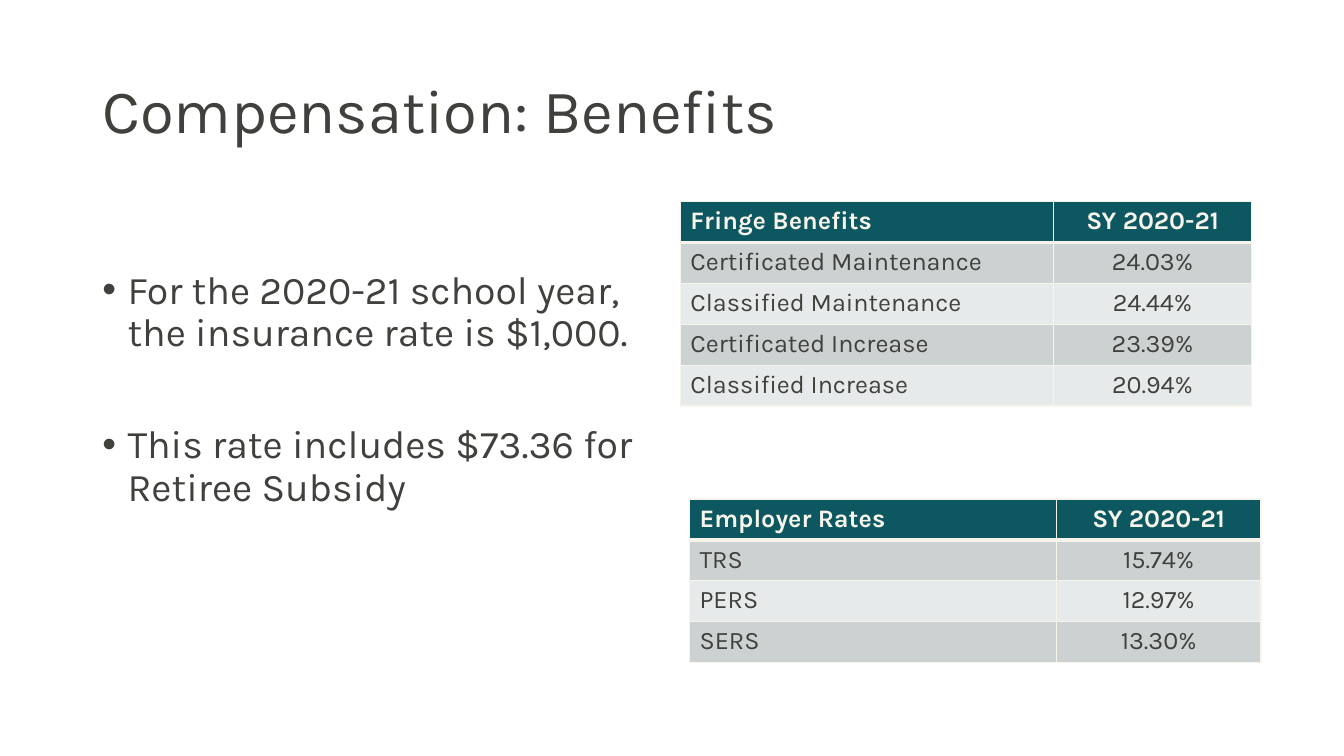
import pptx
import pptx.util
import pptx.dml.color
import pptx.enum.text
import pptx.oxml
import pptx.oxml.ns

Pt = pptx.util.Pt
ALIGN = pptx.enum.text.PP_ALIGN
ANCHOR = pptx.enum.text.MSO_ANCHOR
COLORS = {
    "text": "40403D",
    "cream": "F7F5EB",
    "teal": "0D5761",
    "dark_band": "CCD1D2",
    "light_band": "E7EAEA",
}
FONT = "Karla"
ROW_HEIGHT = 29.2


def rgb(name):
    return pptx.dml.color.RGBColor.from_string(COLORS[name])


def write(p, text, size=18, color="text", bold=False, align=ALIGN.LEFT):
    p.alignment = align
    r = p.add_run()
    r.text = text
    r.font.name = FONT
    r.font.size = Pt(size)
    r.font.bold = bold
    r.font.color.rgb = rgb(color)


def add_box(s, left, top, width, height, anchor):
    tf = s.shapes.add_textbox(Pt(left), Pt(top), Pt(width), Pt(height)).text_frame
    tf.word_wrap = True
    tf.vertical_anchor = anchor
    return tf


def add_title(s, left, top, width, height, text):
    p = add_box(s, left, top, width, height, ANCHOR.MIDDLE).paragraphs[0]
    p.line_spacing = 0.9
    write(p, text, size=44)


def add_bullets(s, left, top, width, height, items):
    tf = add_box(s, left, top, width, height, ANCHOR.TOP)
    for i, text in enumerate(items):
        p = tf.paragraphs[0] if i == 0 else tf.add_paragraph()
        p.line_spacing = 0.9
        if i:
            p.space_before = Pt(50)
        pPr = p._p.get_or_add_pPr()
        pPr.set("marL", str(Pt(18)))
        pPr.set("indent", str(-Pt(18)))
        ns = pptx.oxml.ns.nsdecls("a")
        pPr.append(pptx.oxml.parse_xml(f'<a:buFont {ns} typeface="Arial"/>'))
        pPr.append(pptx.oxml.parse_xml(f'<a:buChar {ns} char="•"/>'))
        write(p, text, size=28)


def set_borders(cell, bottom, top):
    tcPr = cell._tc.get_or_add_tcPr()
    widths = {"lnL": 1, "lnR": 1, "lnT": top, "lnB": bottom}
    for i, (tag, width) in enumerate(widths.items()):
        tcPr.insert(i, pptx.oxml.parse_xml(
            f'<a:{tag} {pptx.oxml.ns.nsdecls("a")} w="{Pt(width)}"><a:solidFill>'
            f'<a:srgbClr val="{COLORS["cream"]}"/></a:solidFill></a:{tag}>'))


def add_rates(s, left, top, widths, rows):
    table = s.shapes.add_table(len(rows), len(widths), Pt(left), Pt(top),
                               Pt(sum(widths)), Pt(ROW_HEIGHT * len(rows))).table
    for column, width in zip(table.columns, widths):
        column.width = Pt(width)
    for i, row in enumerate(rows):
        table.rows[i].height = Pt(ROW_HEIGHT)
        header = i == 0
        band = "teal" if header else "dark_band" if i % 2 else "light_band"
        for j, text in enumerate(row):
            cell = table.cell(i, j)
            cell.fill.solid()
            cell.fill.fore_color.rgb = rgb(band)
            set_borders(cell, bottom=3 if header else 1, top=3 if i == 1 else 1)
            write(cell.text_frame.paragraphs[0], text, bold=header,
                  color="cream" if header else "text",
                  align=ALIGN.CENTER if j else ALIGN.LEFT)


def main():
    prs = pptx.Presentation()
    prs.slide_width, prs.slide_height = Pt(960), Pt(540)
    s = prs.slides.add_slide(prs.slide_layouts[6])
    add_title(s, 66, 28.8, 828, 104.4, "Compensation: Benefits")
    add_bullets(s, 66, 189.5, 408, 283.5, [
        "For the 2020-21 school year, the insurance rate is $1,000.",
        "This rate includes $73.36 for Retiree Subsidy",
    ])
    add_rates(s, 486, 144, (266.4, 141.8), [
        ("Fringe Benefits", "SY 2020-21"),
        ("Certificated Maintenance", "24.03%"),
        ("Classified Maintenance", "24.44%"),
        ("Certificated Increase", "23.39%"),
        ("Classified Increase", "20.94%"),
    ])
    add_rates(s, 492.5, 356.4, (262.1, 146.1), [
        ("Employer Rates", "SY 2020-21"),
        ("TRS", "15.74%"),
        ("PERS", "12.97%"),
        ("SERS", "13.30%"),
    ])
    prs.save("out.pptx")


if __name__ == "__main__":
    main()
